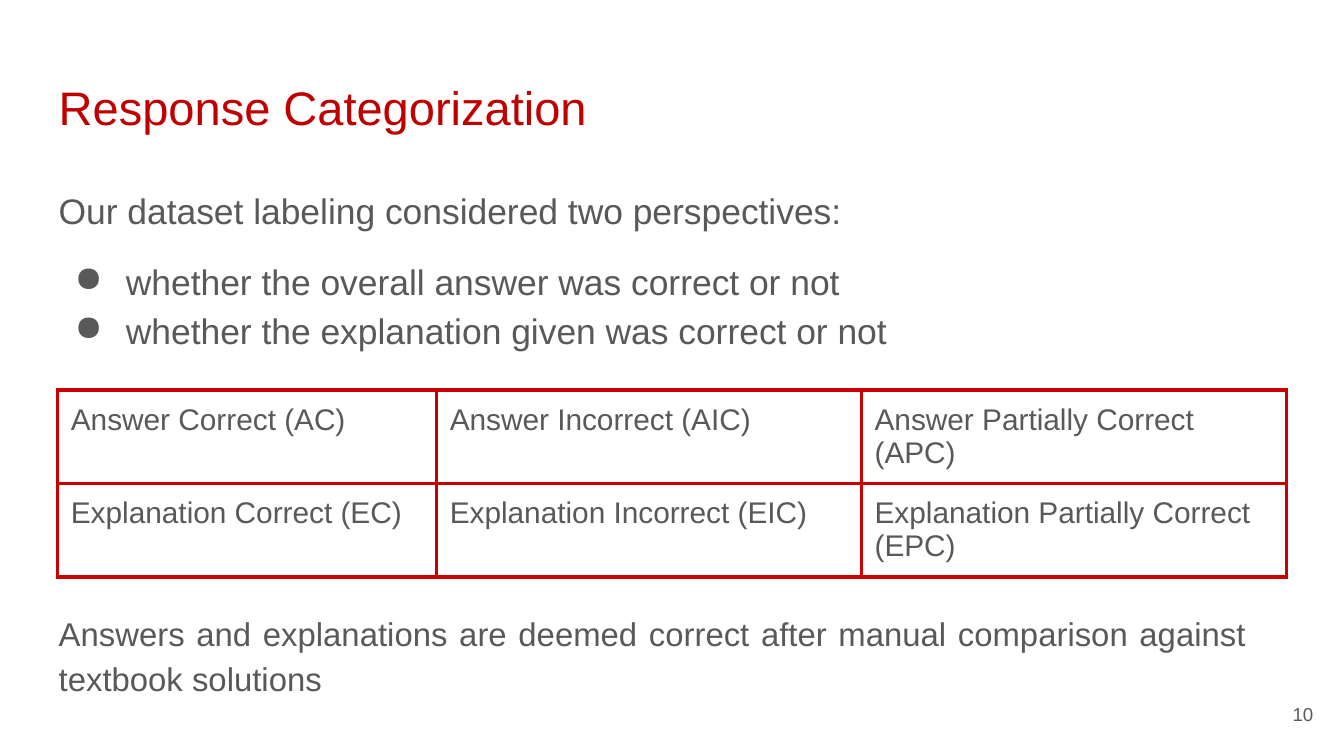
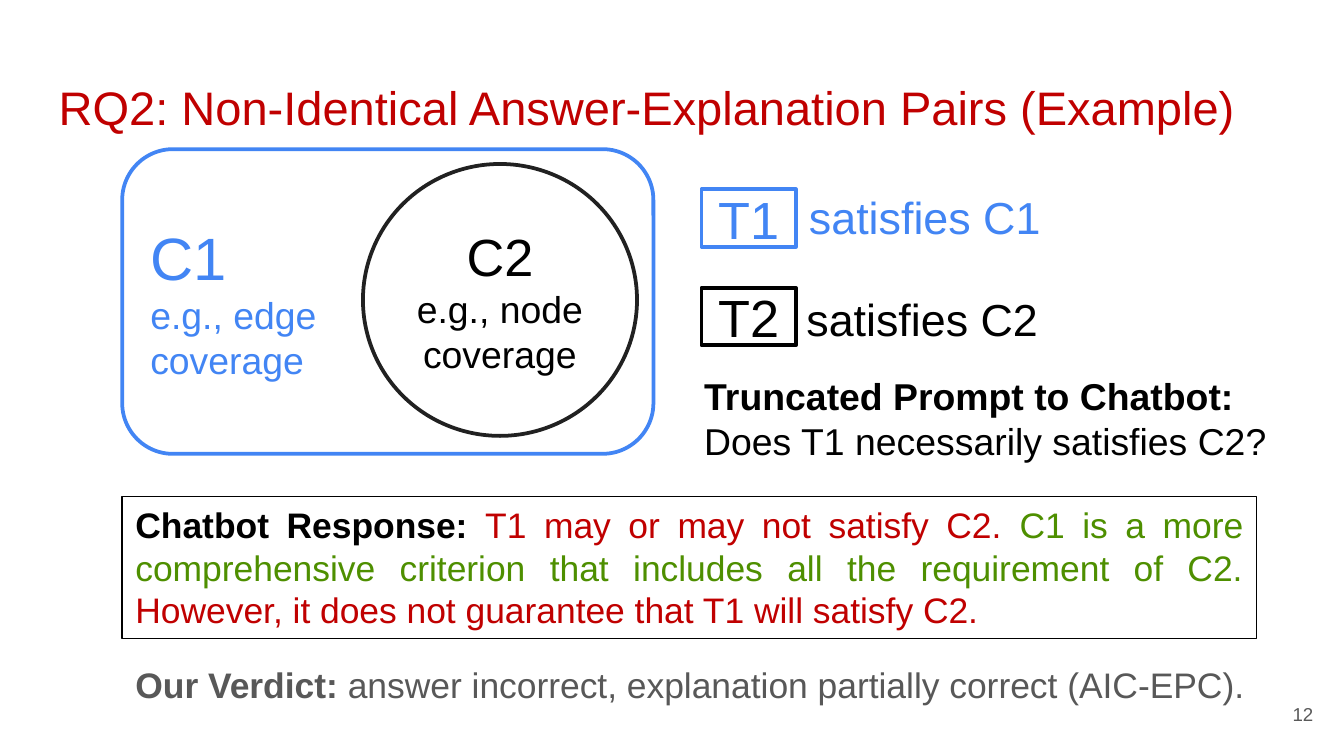
from dataclasses import dataclass
from typing import Optional

from lxml import etree
from pptx import Presentation
from pptx.dml.color import RGBColor
from pptx.enum.shapes import MSO_SHAPE
from pptx.enum.text import MSO_ANCHOR, MSO_AUTO_SIZE, PP_ALIGN
from pptx.oxml.ns import qn
from pptx.util import Cm, Pt

LEFT, CENTER, RIGHT, JUSTIFY = PP_ALIGN.LEFT, PP_ALIGN.CENTER, PP_ALIGN.RIGHT, PP_ALIGN.JUSTIFY
TOP, MIDDLE = MSO_ANCHOR.TOP, MSO_ANCHOR.MIDDLE
NO_AUTOFIT = MSO_AUTO_SIZE.NONE
RECT, ROUNDED, ELLIPSE = MSO_SHAPE.RECTANGLE, MSO_SHAPE.ROUNDED_RECTANGLE, MSO_SHAPE.OVAL

FONT = "Arial"
COLORS = {
    "red": "C00000",
    "border": "CC0000",
    "gray": "595959",
    "verdict": "585858",
    "blue": "4285F4",
    "green": "4E8F00",
    "ink": "212121",
    "black": "000000",
    "white": "FFFFFF",
}
TITLE_ONLY = 5
WIDE_INSET, SLIM_INSET = 0.25, 0.13
MARGIN, DIAGRAM_LEFT = 0.86, 2.31


@dataclass(frozen=True)
class Span:
    text: str
    color: Optional[str] = None
    bold: Optional[bool] = None


@dataclass(frozen=True)
class Para:
    spans: tuple[Span, ...]
    size: float
    color: str
    align: int = LEFT
    line_spacing: Optional[float] = None
    before: float = 0
    bullet: bool = False


@dataclass(frozen=True)
class Box:
    left: float
    top: float
    width: float
    height: float
    paras: tuple[Para, ...]
    geometry: Optional[int] = None
    line: str = "black"
    weight: float = 2
    fill: Optional[str] = "white"
    anchor: int = TOP
    inset: float = SLIM_INSET


@dataclass(frozen=True)
class Criterion:
    test: str
    claim: str
    color: str
    top: float
    claim_left: float
    claim_top: float


def rgb(name: str) -> RGBColor:
    return RGBColor.from_string(COLORS[name])


def plain(text: str, size: float, color: str, **style) -> Para:
    return Para((Span(text),), size, color, **style)


def add_bullet(paragraph, color: str) -> None:
    properties = paragraph._p.get_or_add_pPr()
    properties.set("marL", str(Cm(1.27)))
    properties.set("indent", str(Cm(-0.97)))
    bullet_color = etree.Element(qn("a:buClr"))
    etree.SubElement(bullet_color, qn("a:srgbClr"), val=COLORS[color])
    marker = etree.Element(qn("a:buChar"), char="●")
    position = len(properties.findall(qn("a:lnSpc")) + properties.findall(qn("a:spcBef")))
    properties.insert(position, bullet_color)
    properties.insert(position + 1, marker)


def write_span(paragraph, span: Span) -> None:
    for index, line in enumerate(span.text.split("\n")):
        if index:
            paragraph.add_line_break()
        if not line:
            continue
        run = paragraph.add_run()
        run.text = line
        if span.color:
            run.font.color.rgb = rgb(span.color)
        if span.bold is not None:
            run.font.bold = span.bold


def write_paras(frame, paras: tuple[Para, ...]) -> None:
    for index, para in enumerate(paras):
        paragraph = frame.add_paragraph() if index else frame.paragraphs[0]
        paragraph.alignment = para.align
        if para.line_spacing:
            paragraph.line_spacing = para.line_spacing
        paragraph.space_before = Pt(para.before)
        if para.bullet:
            add_bullet(paragraph, para.color)
        paragraph.font.name = FONT
        paragraph.font.size = Pt(para.size)
        paragraph.font.color.rgb = rgb(para.color)
        for span in para.spans:
            write_span(paragraph, span)


def set_frame(frame, anchor: int, inset: float) -> None:
    frame.word_wrap = True
    frame.auto_size = NO_AUTOFIT
    frame.vertical_anchor = anchor
    frame.margin_left = frame.margin_right = Cm(WIDE_INSET)
    frame.margin_top = frame.margin_bottom = Cm(inset)


def draw_box(slide, box: Box) -> None:
    place = [Cm(v) for v in (box.left, box.top, box.width, box.height)]
    if box.geometry is None:
        shape = slide.shapes.add_textbox(*place)
    else:
        shape = slide.shapes.add_shape(box.geometry, *place)
        shape.shadow.inherit = False
        shape.line.color.rgb = rgb(box.line)
        shape.line.width = Pt(box.weight)
        if box.fill:
            shape.fill.solid()
            shape.fill.fore_color.rgb = rgb(box.fill)
        else:
            shape.fill.background()
    set_frame(shape.text_frame, box.anchor, box.inset)
    write_paras(shape.text_frame, box.paras)


def start_slide(deck, heading: str, number: str):
    slide = deck.slides.add_slide(deck.slide_layouts[TITLE_ONLY])
    slide.background.fill.solid()
    slide.background.fill.fore_color.rgb = rgb("white")
    title = slide.shapes.title
    title.left, title.top, title.width, title.height = Cm(MARGIN), Cm(1.24), Cm(23.67), Cm(1.6)
    set_frame(title.text_frame, TOP, WIDE_INSET)
    write_paras(title.text_frame, (plain(heading, 25.2, "red"),))
    draw_box(slide, Box(23.55, 12.95, 1.52, 1.09, (plain(number, 10, "gray", align=RIGHT),),
                        anchor=MIDDLE, inset=WIDE_INSET))
    return slide


def add_borders(cell, color: str, weight: float) -> None:
    properties = cell._tc.get_or_add_tcPr()
    for index, side in enumerate(("lnL", "lnR", "lnT", "lnB")):
        border = etree.Element(qn(f"a:{side}"), w=str(Pt(weight)))
        fill = etree.SubElement(border, qn("a:solidFill"))
        etree.SubElement(fill, qn("a:srgbClr"), val=COLORS[color])
        properties.insert(index, border)


def draw_categories(slide) -> None:
    column_widths = (7.16, 8.03, 8.03)
    row_height = 1.77
    verdicts = (("Correct", "C"), ("Incorrect", "IC"), ("Partially Correct", "PC"))
    subjects = ("Answer", "Explanation")
    table = slide.shapes.add_table(
        len(subjects), len(verdicts), Cm(1.09), Cm(7.37),
        Cm(sum(column_widths)), Cm(row_height * len(subjects))).table
    table.first_row = table.horz_banding = False
    for column, width in zip(table.columns, column_widths):
        column.width = Cm(width)
    for row, subject in enumerate(subjects):
        table.rows[row].height = Cm(row_height)
        for column, (verdict, code) in enumerate(verdicts):
            cell = table.cell(row, column)
            cell.fill.background()
            add_borders(cell, "border", 2.25)
            cell.margin_left = cell.margin_right = Cm(WIDE_INSET)
            cell.margin_top = cell.margin_bottom = Cm(WIDE_INSET)
            label = f"{subject} {verdict} ({subject[0]}{code})"
            write_paras(cell.text_frame, (plain(label, 16, "gray"),))


def build_categorization(deck) -> None:
    slide = start_slide(deck, "Response Categorization", "10")
    body = {"size": 19, "color": "gray", "align": JUSTIFY, "line_spacing": 1.15}
    perspectives = (
        plain("Our dataset labeling considered two perspectives: ", **body),
        plain("whether the overall answer was correct or not ", before=12, bullet=True, **body),
        plain("whether the explanation given was correct or not", bullet=True, **body),
    )
    draw_box(slide, Box(MARGIN, 3.2, 23.67, 3.94, perspectives, inset=WIDE_INSET))
    draw_categories(slide)
    basis = plain("Answers and explanations are deemed correct after manual comparison against \n"
                  "textbook solutions", **{**body, "size": 17.6})
    draw_box(slide, Box(MARGIN, 11.23, 23.19, 2.51, (basis,), inset=WIDE_INSET))


def build_example(deck) -> None:
    slide = start_slide(deck, "RQ2: Non-Identical Answer-Explanation Pairs (Example)", "12")
    response = Para((
        Span("Chatbot Response: ", bold=True),
        Span("T1 may or may not satisfy C2. ", "red"),
        Span("C1 is a more comprehensive criterion that includes all the requirement of C2. ", "green"),
        Span("However, it does not guarantee that T1 will satisfy C2. ", "red"),
    ), 19, "black", JUSTIFY)
    verdict = Para((
        Span("Our Verdict: ", bold=True),
        Span("answer incorrect, explanation partially correct (AIC-EPC)."),
    ), 19, "verdict")
    prompt = Para((
        Span("Truncated Prompt to Chatbot: \n", bold=True),
        Span("Does T1 necessarily satisfies C2?"),
    ), 20, "black")
    outer = (plain("C1", 32, "blue"), plain("e.g., edge\ncoverage", 20, "blue"))
    inner = (plain("C2", 28, "black", align=CENTER),
             plain("e.g., node coverage", 20, "black", align=CENTER))
    for box in (
        Box(DIAGRAM_LEFT, 9.38, 21.44, 2.69, (response,), RECT, weight=0.75, fill=None),
        Box(DIAGRAM_LEFT, 12.4, 22, 1.07, (verdict,)),
        Box(DIAGRAM_LEFT, 2.82, 10.04, 5.76, outer, ROUNDED, "blue", anchor=MIDDLE),
        Box(6.86, 3.1, 5.18, 5.14, inner, ELLIPSE, "ink", anchor=MIDDLE),
        Box(13.06, 6.93, 11.25, 1.96, (prompt,)),
    ):
        draw_box(slide, box)
    for criterion in (
        Criterion("T1", "satisfies C1", "blue", 3.58, 15.04, 3.45),
        Criterion("T2", "satisfies C2", "black", 5.44, 14.99, 5.38),
    ):
        test = plain(criterion.test, 28, criterion.color, align=CENTER)
        claim = plain(criterion.claim, 24, criterion.color)
        draw_box(slide, Box(13.26, criterion.top, 1.78, 1.09, (test,), RECT,
                            criterion.color, anchor=MIDDLE))
        draw_box(slide, Box(criterion.claim_left, criterion.claim_top, 4.93, 1.27, (claim,)))


def main() -> None:
    deck = Presentation()
    deck.slide_width, deck.slide_height = Cm(25.4), Cm(14.29)
    build_categorization(deck)
    build_example(deck)
    deck.save("out.pptx")


if __name__ == "__main__":
    main()
